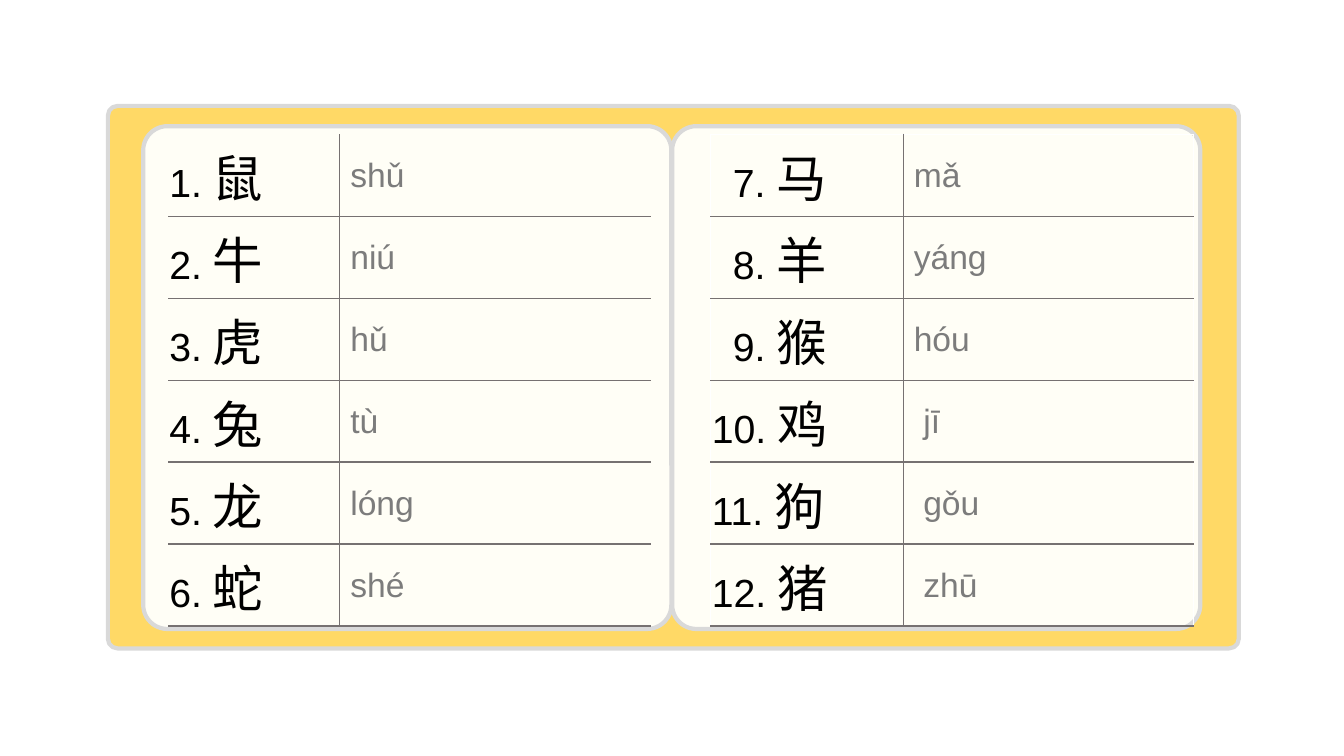
from dataclasses import dataclass

from lxml import etree
from pptx import Presentation
from pptx.dml.color import RGBColor
from pptx.enum.shapes import MSO_SHAPE
from pptx.enum.text import MSO_ANCHOR
from pptx.oxml.ns import qn
from pptx.util import Cm, Pt

ROUND = MSO_SHAPE.ROUNDED_RECTANGLE
MIDDLE = MSO_ANCHOR.MIDDLE


@dataclass(frozen=True)
class Theme:
    gold: str = "FFD966"
    cream: str = "FFFEF6"
    edge: str = "D9D9D9"
    rule: str = "767171"
    white: str = "FFFFFF"
    ink: str = "000000"
    gray: str = "7C7C7C"
    latin: str = "Arial"
    han: str = "Noto Sans CJK SC"
    num_size: int = 28
    han_size: int = 36
    sound_size: int = 24


THEME = Theme()
LEFT = [("鼠", "shǔ"), ("牛", "niú"), ("虎", "hǔ"),
        ("兔", "tù"), ("龙", "lónɡ"), ("蛇", "shé")]
RIGHT = [("马", "mǎ"), ("羊", "yánɡ"), ("猴", "hóu"),
         ("鸡", "jī"), ("狗", "ɡǒu"), ("猪", "zhū")]
TABLE_TOP, TABLE_HIGH = 3.38, 12.4
INSET = 0.03
DIGIT = 0.53
SPACE = 0.24


def add_panel(group, x, y, w, h, fill, bend):
    panel = group.shapes.add_shape(ROUND, Cm(x), Cm(y), Cm(w), Cm(h))
    panel.adjustments[0] = bend
    panel.shadow.inherit = False
    panel.fill.solid()
    panel.fill.fore_color.rgb = RGBColor.from_string(fill)
    panel.line.color.rgb = RGBColor.from_string(THEME.edge)
    panel.line.width = Pt(3)


def set_edges(cell, **edges):
    """Draw the L, R, T and B borders; a side without a colour is hidden."""
    props = cell._tc.get_or_add_tcPr()
    for side in "LRTB":
        line = etree.SubElement(props, qn(f"a:ln{side}"), w=str(Pt(1)))
        color = edges.get(side)
        if color:
            fill = etree.SubElement(line, qn("a:solidFill"))
            etree.SubElement(fill, qn("a:srgbClr"), val=color)
        else:
            etree.SubElement(line, qn("a:noFill"))


def add_run(cell, text, font, size, color):
    run = cell.text_frame.paragraphs[0].add_run()
    run.text = text
    run.font.name = font
    run.font.size = Pt(size)
    run.font.color.rgb = RGBColor.from_string(color)
    etree.SubElement(run.font._element, qn("a:ea"), typeface=font)


def set_cell(cell, indent, **edges):
    cell.margin_left = Cm(INSET + indent)
    cell.margin_right = cell.margin_top = Cm(INSET)
    cell.margin_bottom = 0
    cell.vertical_anchor = MIDDLE
    set_edges(cell, **edges)
    cell.fill.background()


def add_words(slide, x, widths, words, first, outer=None):
    """Add one numbered word table; outer colours its left, top and right."""
    rows = len(words)
    table = slide.shapes.add_table(
        rows, 2, Cm(x), Cm(TABLE_TOP), Cm(sum(widths)), Cm(TABLE_HIGH)).table
    table.first_row = table.horz_banding = False
    for col, width in zip(table.columns, widths):
        col.width = Cm(width)
    digits = len(str(first + rows - 1))
    rule = THEME.rule
    for i, (word, sound) in enumerate(words):
        table.rows[i].height = Cm(TABLE_HIGH / rows)
        number = str(first + i)
        top = rule if i else outer
        name, say = table.cell(i, 0), table.cell(i, 1)
        set_cell(name, DIGIT * (digits - len(number)),
                 L=outer, R=rule, T=top, B=rule)
        set_cell(say, SPACE * len(number), L=rule, R=outer, T=top, B=rule)
        add_run(name, f"{number}. ", THEME.latin, THEME.num_size, THEME.ink)
        add_run(name, word, THEME.han, THEME.han_size, THEME.ink)
        add_run(say, sound, THEME.latin, THEME.sound_size, THEME.gray)


def main():
    deck = Presentation()
    deck.slide_width, deck.slide_height = Cm(33.87), Cm(19.05)
    slide = deck.slides.add_slide(deck.slide_layouts[6])
    board = slide.shapes.add_group_shape()
    add_panel(board, 2.72, 2.67, 28.5, 13.67, THEME.gold, 0.018)
    for x in (3.61, 16.94):
        add_panel(board, x, 3.18, 13.31, 12.67, THEME.cream, 0.048)
    add_words(slide, 4.24, (4.32, 7.85), LEFT, 1)
    add_words(slide, 17.91, (4.85, 7.32), RIGHT, 7, THEME.white)
    deck.save("out.pptx")


if __name__ == "__main__":
    main()
